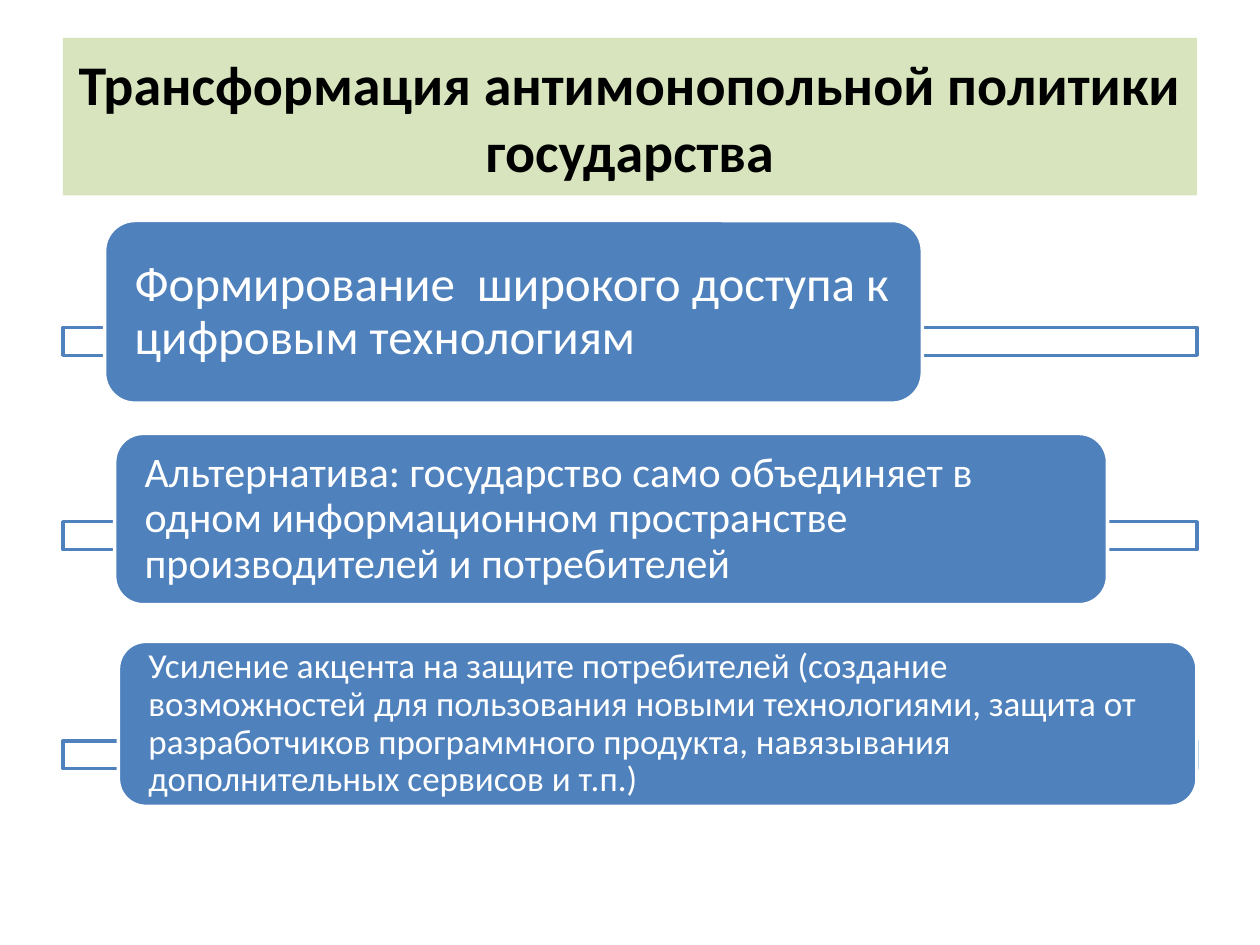
from dataclasses import dataclass

import pptx
import pptx.dml.color
import pptx.enum.shapes
import pptx.enum.text
import pptx.oxml.ns
import pptx.util
from lxml import etree

SHAPES = pptx.enum.shapes.MSO_SHAPE
ALIGN = pptx.enum.text.PP_ALIGN
WIDTH, HEIGHT = 10, 7.5
MARGIN = 0.05 * WIDTH
CONTENT_WIDTH = WIDTH - 2 * MARGIN
BAR_HEIGHT = 0.22
TEXT_INDENT = 0.24
# Share of a rounded rectangle's height that its corners take from the text area
CORNER_INSET = 0.05


@dataclass(frozen=True)
class Theme:
    font: str = "Calibri"
    title_fill: str = "D7E4BD"
    title_text: str = "000000"
    accent: str = "4F81BD"
    light: str = "FFFFFF"
    title_size: int = 32
    line_width: int = 2
    bar_opacity: int = 90


@dataclass(frozen=True)
class Box:
    left: float
    top: float
    width: float
    height: float


@dataclass(frozen=True)
class Thesis:
    text: str
    size: int
    card: Box
    bar_top: float


THEME = Theme()
TITLE = "Трансформация антимонопольной политики государства"
THESES = [
    Thesis("Формирование  широкого доступа к цифровым технологиям",
           28, Box(0.83, 1.75, 6.49, 1.45), 2.6),
    Thesis("Альтернатива: государство само объединяет в одном информационном "
           "пространстве производителей и потребителей",
           24, Box(0.91, 3.44, 7.88, 1.36), 4.14),
    Thesis("Усиление акцента на защите потребителей (создание возможностей для "
           "пользования новыми технологиями, защита от разработчиков программного "
           "продукта, навязывания дополнительных сервисов и т.п.)",
           20, Box(0.94, 5.09, 8.56, 1.31), 5.88),
]


def rgb(value: str) -> pptx.dml.color.RGBColor:
    return pptx.dml.color.RGBColor.from_string(value)


def add_block(page, kind, box: Box, fill: str, line: str | None = None):
    """Draw a flat filled shape, outlined if a line colour is given."""
    shape = page.shapes.add_shape(
        kind, *(pptx.util.Inches(n) for n in (box.left, box.top, box.width, box.height)))
    shape.shadow.inherit = False
    shape.fill.solid()
    shape.fill.fore_color.rgb = rgb(fill)
    if line is None:
        shape.line.fill.background()
    else:
        shape.line.color.rgb = rgb(line)
        shape.line.width = pptx.util.Pt(THEME.line_width)
    return shape


def set_opacity(shape, percent: int) -> None:
    color = shape.fill._xPr.find(".//" + pptx.oxml.ns.qn("a:srgbClr"))
    alpha = etree.SubElement(color, pptx.oxml.ns.qn("a:alpha"))
    alpha.set("val", str(percent * 1000))


def write_text(shape, text: str, *, size: int, color: str, bold: bool = False,
               align=ALIGN.LEFT, spacing: float = 1.0,
               side: float = 0.1, edge: float = 0.05) -> None:
    frame = shape.text_frame
    frame.word_wrap = True
    frame.auto_size = pptx.enum.text.MSO_AUTO_SIZE.NONE
    frame.vertical_anchor = pptx.enum.text.MSO_ANCHOR.MIDDLE
    frame.margin_left = frame.margin_right = pptx.util.Inches(side)
    frame.margin_top = frame.margin_bottom = pptx.util.Inches(edge)
    para = frame.paragraphs[0]
    para.alignment = align
    para.line_spacing = spacing
    span = para.add_run()
    span.text = text
    span.font.name = THEME.font
    span.font.size = pptx.util.Pt(size)
    span.font.bold = bold
    span.font.color.rgb = rgb(color)


def draw_thesis(page, thesis: Thesis) -> None:
    """Draw the thin bar and the card lying on it."""
    bar = add_block(page, SHAPES.RECTANGLE,
                    Box(MARGIN, thesis.bar_top, CONTENT_WIDTH, BAR_HEIGHT),
                    THEME.light, THEME.accent)
    set_opacity(bar, THEME.bar_opacity)
    card = add_block(page, SHAPES.ROUNDED_RECTANGLE, thesis.card,
                     THEME.accent, THEME.light)
    write_text(card, thesis.text, size=thesis.size, color=THEME.light, spacing=0.9,
               side=TEXT_INDENT - CORNER_INSET * thesis.card.height, edge=0)


def main() -> None:
    deck = pptx.Presentation()
    deck.slide_width = pptx.util.Inches(WIDTH)
    deck.slide_height = pptx.util.Inches(HEIGHT)
    page = deck.slides.add_slide(deck.slide_layouts[6])

    # Title band
    title = add_block(page, SHAPES.RECTANGLE,
                      Box(MARGIN, 0.04 * HEIGHT, CONTENT_WIDTH, HEIGHT / 6),
                      THEME.title_fill)
    write_text(title, TITLE, size=THEME.title_size, color=THEME.title_text,
               bold=True, align=ALIGN.CENTER)

    # Theses
    for thesis in THESES:
        draw_thesis(page, thesis)

    deck.save("out.pptx")


if __name__ == "__main__":
    main()
